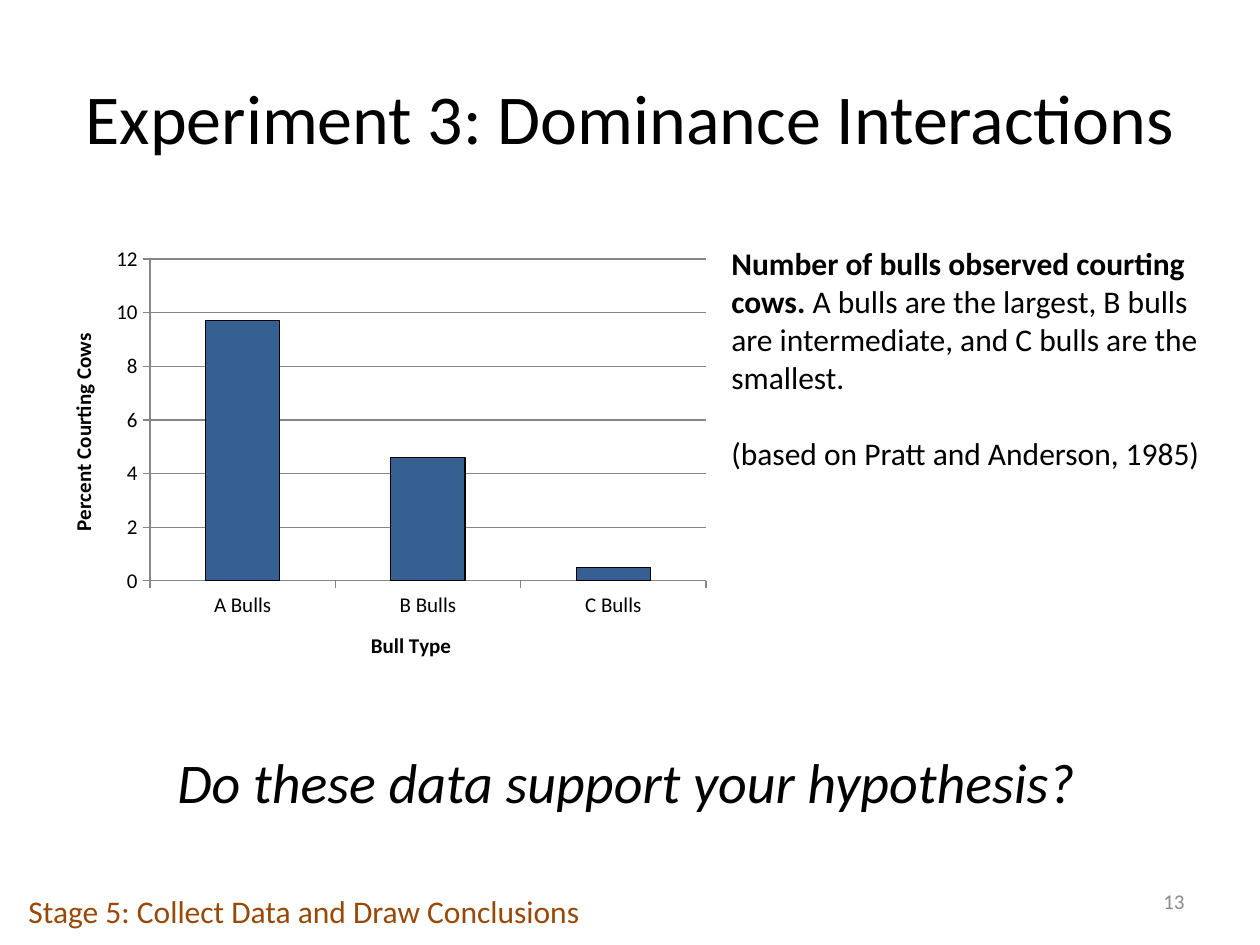
from lxml import etree
from pptx import Presentation
from pptx.chart.data import CategoryChartData
from pptx.dml.color import RGBColor
from pptx.enum.chart import XL_CHART_TYPE, XL_TICK_MARK
from pptx.enum.text import MSO_ANCHOR, PP_ALIGN
from pptx.oxml.ns import qn
from pptx.util import Pt

EMU_PER_PX = 914400 // 126
SLIDE_SIZE = (1260, 945)
BLANK_LAYOUT = 6
FONT = "Calibri"
COLORS = {
    "text": "000000",
    "stage": "984807",
    "number": "8C8C8C",
    "bar": "376092",
    "grid": "868686",
}
LEFT, CENTER, RIGHT = PP_ALIGN.LEFT, PP_ALIGN.CENTER, PP_ALIGN.RIGHT
TOP, MIDDLE = MSO_ANCHOR.TOP, MSO_ANCHOR.MIDDLE
COLUMNS = XL_CHART_TYPE.COLUMN_CLUSTERED
TICK_OUTSIDE = XL_TICK_MARK.OUTSIDE
TICK_NONE = XL_TICK_MARK.NONE


def px(length):
    return length * EMU_PER_PX


def rgb(name):
    return RGBColor.from_string(COLORS[name])


def style_font(font, size, color="text", bold=False, italic=False):
    font.name, font.size = FONT, Pt(size)
    font.bold, font.italic = bold, italic
    font.color.rgb = rgb(color)


def write(paragraph, text, **style):
    run = paragraph.add_run()
    run.text = text
    style_font(run.font, **style)


class SlideBuilder:
    def __init__(self, slide, text_size):
        self.slide = slide
        self.text_size = text_size

    def text(self, box, *paragraphs, align=LEFT, anchor=TOP, gap=0, **style):
        """Each paragraph is a list of (text, bold) runs; gap is in points."""
        frame = self.slide.shapes.add_textbox(*map(px, box)).text_frame
        frame.word_wrap = True
        frame.vertical_anchor = anchor
        style = {"size": self.text_size, **style}
        for index, runs in enumerate(paragraphs):
            paragraph = frame.add_paragraph() if index else frame.paragraphs[0]
            paragraph.alignment = align
            paragraph.space_before = Pt(gap if index else 0)
            for text, bold in runs:
                write(paragraph, text, bold=bold, **style)

    def column_chart(self, box, plot, values, category_title, value_title, size=12):
        data = CategoryChartData()
        data.categories = list(values)
        data.add_series("Series 1", list(values.values()))
        chart = self.slide.shapes.add_chart(COLUMNS, *map(px, box), data).chart
        chart.has_legend = chart.has_title = False
        style_font(chart.font, size)
        self.place_plot(chart, box, plot)

        columns = chart.plots[0]
        columns.gap_width = 150
        columns.vary_by_categories = False
        bars = columns.series[0].format
        bars.fill.solid()
        bars.fill.fore_color.rgb = rgb("bar")
        bars.line.color.rgb = rgb("text")
        bars.line.width = Pt(0.75)

        value_axis = chart.value_axis
        value_axis.minimum_scale, value_axis.maximum_scale = 0, 12
        value_axis.major_unit = 2
        lines = [value_axis.major_gridlines.format.line]
        for axis, title in ((chart.category_axis, category_title), (value_axis, value_title)):
            axis.major_tick_mark = TICK_OUTSIDE
            axis.minor_tick_mark = TICK_NONE
            write(axis.axis_title.text_frame.paragraphs[0], title, size=size, bold=True)
            lines.append(axis.format.line)
        for line in lines:
            line.color.rgb = rgb("grid")
            line.width = Pt(0.75)

    @staticmethod
    def place_plot(chart, box, plot):
        """Fix the inner plot area, given in slide px, within the chart box."""
        area = chart.plots[0]._element.getparent()
        for old in area.findall(qn("c:layout")):
            area.remove(old)
        layout = etree.Element(qn("c:layout"))
        area.insert(0, layout)
        manual = etree.SubElement(layout, qn("c:manualLayout"))
        left, top, width, height = box
        settings = {
            "layoutTarget": "inner",
            "xMode": "edge",
            "yMode": "edge",
            "x": (plot[0] - left) / width,
            "y": (plot[1] - top) / height,
            "w": plot[2] / width,
            "h": plot[3] / height,
        }
        for tag, value in settings.items():
            etree.SubElement(manual, qn(f"c:{tag}")).set("val", str(value))


def main():
    deck = Presentation()
    deck.slide_width, deck.slide_height = map(px, SLIDE_SIZE)
    slide = deck.slides.add_slide(deck.slide_layouts[BLANK_LAYOUT])
    builder = SlideBuilder(slide, text_size=18)

    builder.text((63, 38, 1134, 158), [("Experiment 3: Dominance Interactions", False)],
                 size=40, align=CENTER, anchor=MIDDLE)
    builder.column_chart(
        box=(44, 238, 675, 447),
        plot=(150, 259, 556, 322),
        values={"A Bulls": 9.7, "B Bulls": 4.6, "C Bulls": 0.5},
        category_title="Bull Type",
        value_title="Percent Courting Cows",
    )
    builder.text(
        (719, 238, 518, 280),
        [("Number of bulls observed courting cows.", True),
         (" A bulls are the largest, B bulls are intermediate, and C bulls are the smallest.", False)],
        [("(based on Pratt and Anderson, 1985)", False)],
        gap=22,
    )
    builder.text((16, 741, 1221, 81), [("Do these data support your hypothesis?", False)],
                 size=32, italic=True, align=CENTER)
    builder.text((16, 886, 736, 50), [("Stage 5: Collect Data and Draw Conclusions", False)],
                 color="stage")
    builder.text((903, 876, 294, 50), [("13", False)],
                 size=12, color="number", align=RIGHT, anchor=MIDDLE)
    deck.save("out.pptx")


if __name__ == "__main__":
    main()
